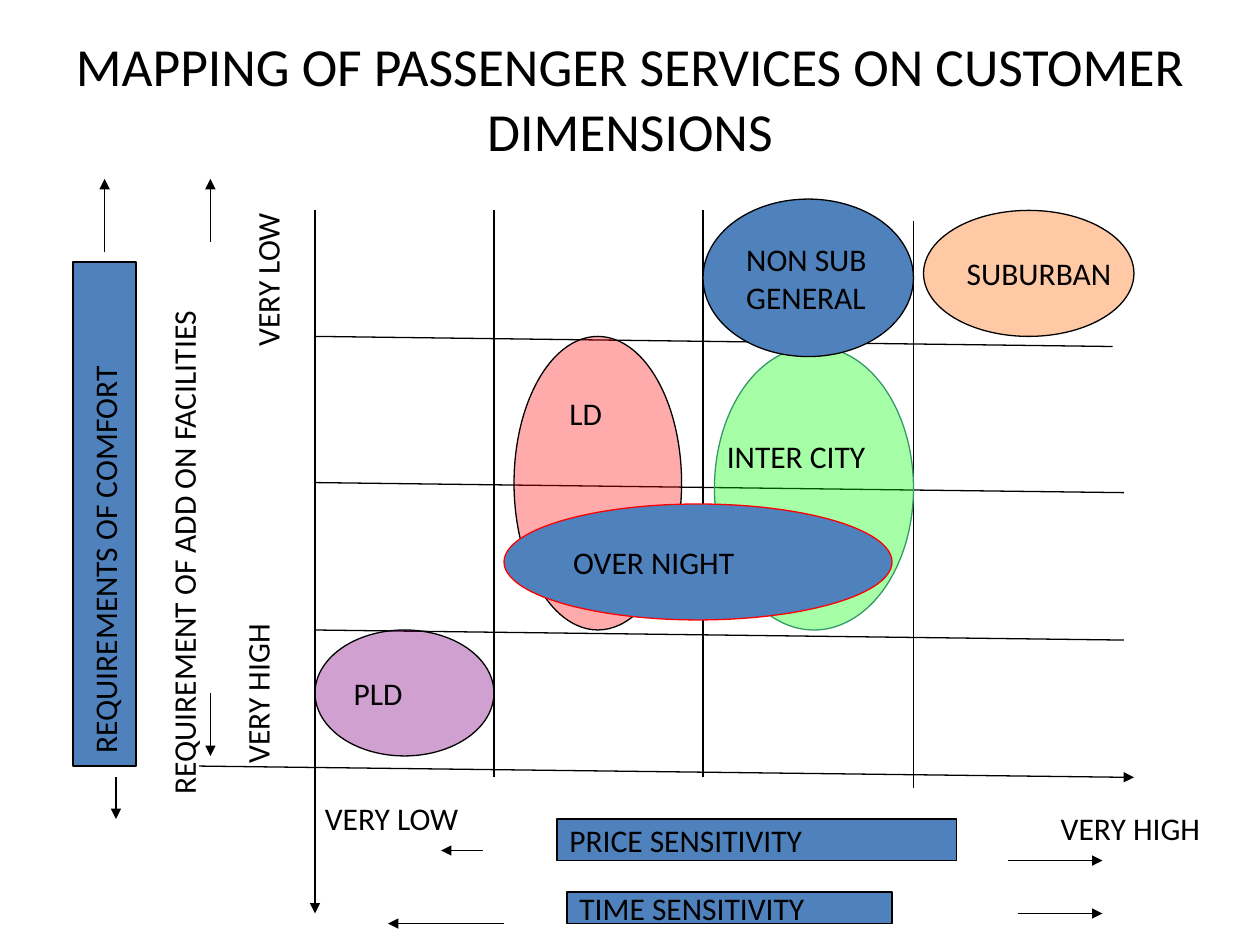
from lxml import etree
from pptx import Presentation
from pptx.dml.color import RGBColor
from pptx.enum.shapes import MSO_CONNECTOR, MSO_SHAPE
from pptx.enum.text import MSO_ANCHOR, MSO_AUTO_SIZE, PP_ALIGN
from pptx.oxml.ns import qn
from pptx.util import Inches, Pt

RECT, OVAL = MSO_SHAPE.RECTANGLE, MSO_SHAPE.OVAL
STRAIGHT = MSO_CONNECTOR.STRAIGHT
MIDDLE, TOP = MSO_ANCHOR.MIDDLE, MSO_ANCHOR.TOP
LEFT, CENTER = PP_ALIGN.LEFT, PP_ALIGN.CENTER
GROW = MSO_AUTO_SIZE.SHAPE_TO_FIT_TEXT
BLACK, BLUE = "000000", "4F81BD"
THIN = Pt(0.75)


def color(text):
    return RGBColor.from_string(text)


def write(shape, text, size=18, align=LEFT, anchor=MIDDLE, wrap=False):
    frame = shape.text_frame
    frame.text = text
    frame.word_wrap = wrap
    frame.vertical_anchor = anchor
    for para in frame.paragraphs:
        para.alignment = align
        para.font.name = "Calibri"
        para.font.size = Pt(size)
        para.font.color.rgb = color(BLACK)


def label(slide, text, left, top, width, turn=0):
    box = slide.shapes.add_textbox(Inches(left), Inches(top), Inches(width), Inches(0.4))
    write(box, text, anchor=TOP)
    box.text_frame.auto_size = GROW
    box.rotation = turn


def block(slide, kind, box, text="", fill=BLUE, alpha=100, edge=BLACK, turn=0):
    """Draw a filled shape; alpha is its opacity in percent."""
    shape = slide.shapes.add_shape(kind, *map(Inches, box))
    shape.shadow.inherit = False
    shape.rotation = turn
    shape.fill.solid()
    shape.fill.fore_color.rgb = color(fill)
    if alpha < 100:
        tint = shape._element.spPr.find(qn("a:solidFill")).find(qn("a:srgbClr"))
        etree.SubElement(tint, qn("a:alpha")).set("val", str(alpha * 1000))
    shape.line.color.rgb = color(edge)
    shape.line.width = THIN
    if text:
        write(shape, text)


def line(slide, x1, y1, x2, y2, arrow=False):
    link = slide.shapes.add_connector(STRAIGHT, *map(Inches, (x1, y1, x2, y2)))
    link.line.color.rgb = color(BLACK)
    link.line.width = THIN
    props = link._element.spPr
    if arrow:
        etree.SubElement(props.find(qn("a:ln")), qn("a:tailEnd")).set("type", "triangle")
    etree.SubElement(props, qn("a:effectLst"))


def title(slide, left, top, width, height):
    box = slide.shapes.add_textbox(*map(Inches, (left, top, width, height)))
    box.text_frame.margin_left = box.text_frame.margin_right = Inches(0.05)
    write(box, "MAPPING OF PASSENGER SERVICES ON CUSTOMER DIMENSIONS",
          30.6, CENTER, wrap=True)


def grid(slide, left, top):
    line(slide, left, top, left, top + 5.58, True)
    line(slide, left - 0.92, top + 4.41, left + 6.5, top + 4.5, True)
    for x, drop in ((1.42, 0), (3.08, 0), (4.75, 0.08)):
        line(slide, left + x, top + drop, left + x, top + drop + 4.5)
    for y, width in ((1, 6.33), (2.16, 6.42), (3.33, 6.42)):
        line(slide, left, top + y, left + width, top + y + 0.08)


def price_and_time(slide, left, top):
    """Draw the scale below the grid."""
    label(slide, "VERY LOW", left, top, 1.52)
    label(slide, "VERY HIGH", left + 5.84, top + 0.08, 1.58)
    block(slide, RECT, (left + 1.94, top + 0.21, 3.17, 0.33), "PRICE SENSITIVITY")
    block(slide, RECT, (left + 2.02, top + 0.79, 2.58, 0.25), "TIME SENSITIVITY")
    for start, end, y in ((1.35, 1.02, 0.46), (5.52, 6.27, 0.54),
                          (5.6, 6.27, 0.96), (1.52, 0.6, 1.04)):
        line(slide, left + start, top + y, left + end, top + y, True)


def comfort_and_extras(slide, left, top):
    """Draw the scale beside the grid, its words turned upwards."""
    for text, x, y, width in (
            ("VERY LOW", 0.78, 0.47, 1.52),
            ("VERY HIGH", 0.67, 3.75, 1.58),
            ("REQUIREMENT OF ADD ON FACILITIES", -1.58, 2.33, 4.91)):
        label(slide, text, left + x, top + y, width, 270)
    block(slide, RECT, (left - 1.75, top + 2.41, 4, 0.5),
          "REQUIREMENTS OF COMFORT", turn=270)
    for x, start, end in ((1.09, 0.5, 0), (1.09, 4.08, 4.58),
                          (0.25, 0.58, 0), (0.34, 4.75, 5.08)):
        line(slide, left + x, top + start, left + x, top + end, True)


def services(slide, left, top):
    def oval(x, y, width, height, *look):
        block(slide, OVAL, (left + x, top + y, width, height), *look)

    oval(0, 3.33, 1.42, 1, "PLD", "800080", 37)
    oval(1.58, 1, 1.33, 2.33, "", "FF0000", 33)
    label(slide, "LD", left + 1.92, top + 1.41, 0.52)
    oval(3.17, 1.08, 1.58, 2.25, "", "00FF00", 35, "339966")
    oval(1.5, 2.33, 3.08, 0.92, "OVER NIGHT", BLUE, 100, "FF0000")
    label(slide, "INTER CITY", left + 3.17, top + 1.75, 1.59)
    oval(3.08, -0.09, 1.67, 1.25, "NON SUB\nGENERAL")
    oval(4.83, 0, 1.67, 1, "SUBURBAN", "FF6600", 35)


def main():
    deck = Presentation()
    deck.slide_width, deck.slide_height = Inches(10), Inches(7.5)
    slide = deck.slides.add_slide(deck.slide_layouts[6])
    title(slide, 0.5, 0.3, 9, 0.95)
    grid(slide, 2.5, 1.67)
    price_and_time(slide, 2.48, 6.29)
    comfort_and_extras(slide, 0.58, 1.42)
    services(slide, 2.5, 1.67)
    deck.save("out.pptx")


if __name__ == "__main__":
    main()
